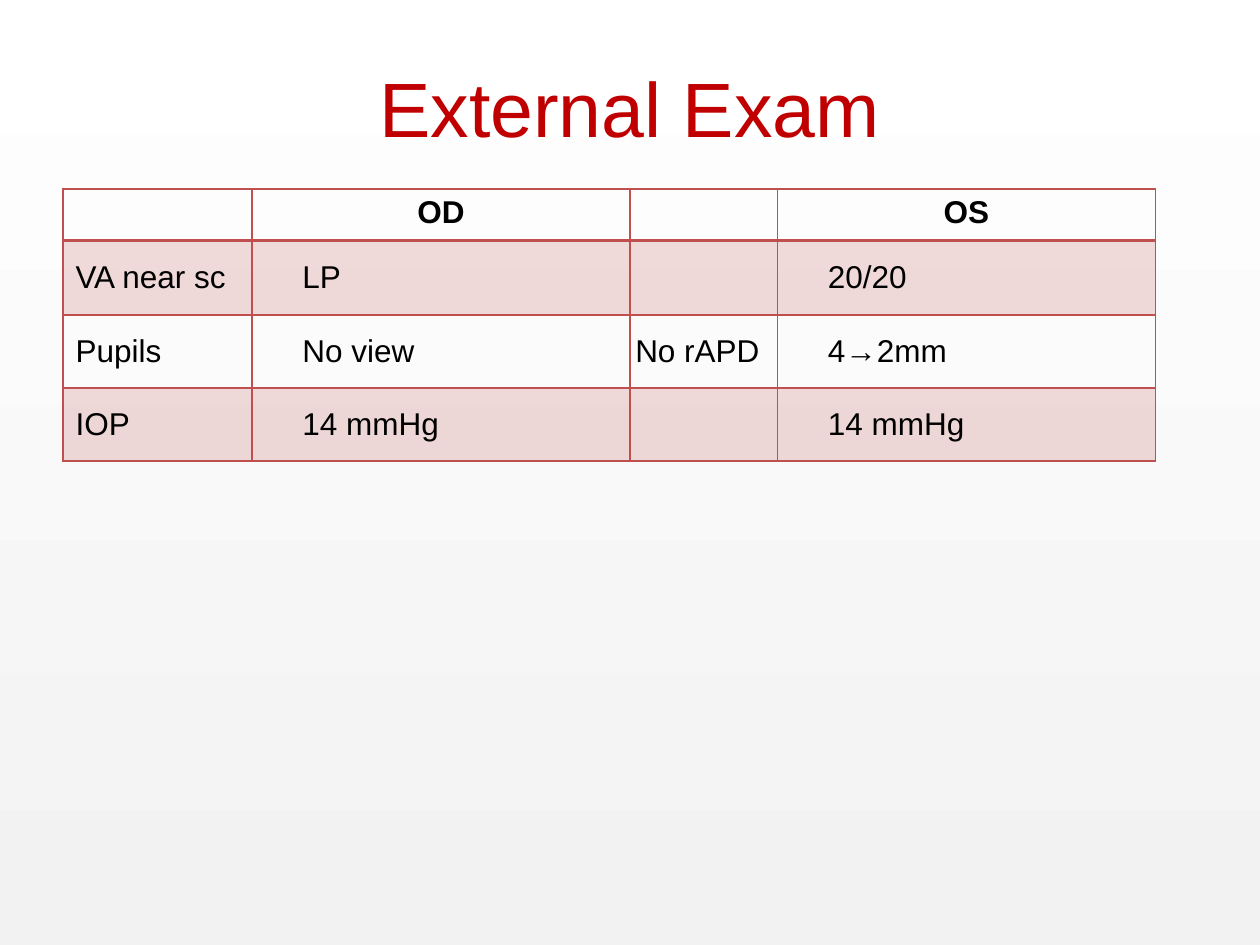
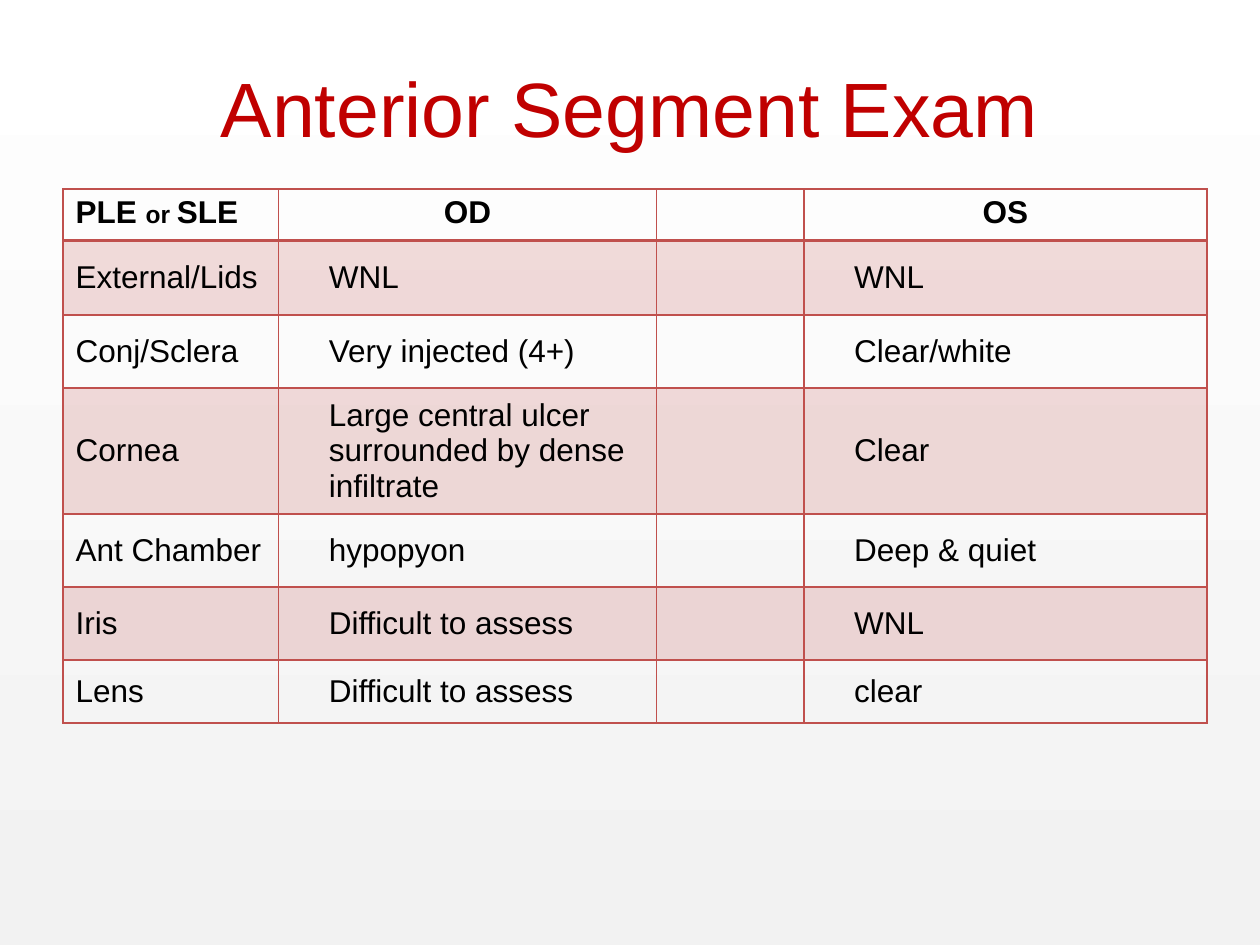
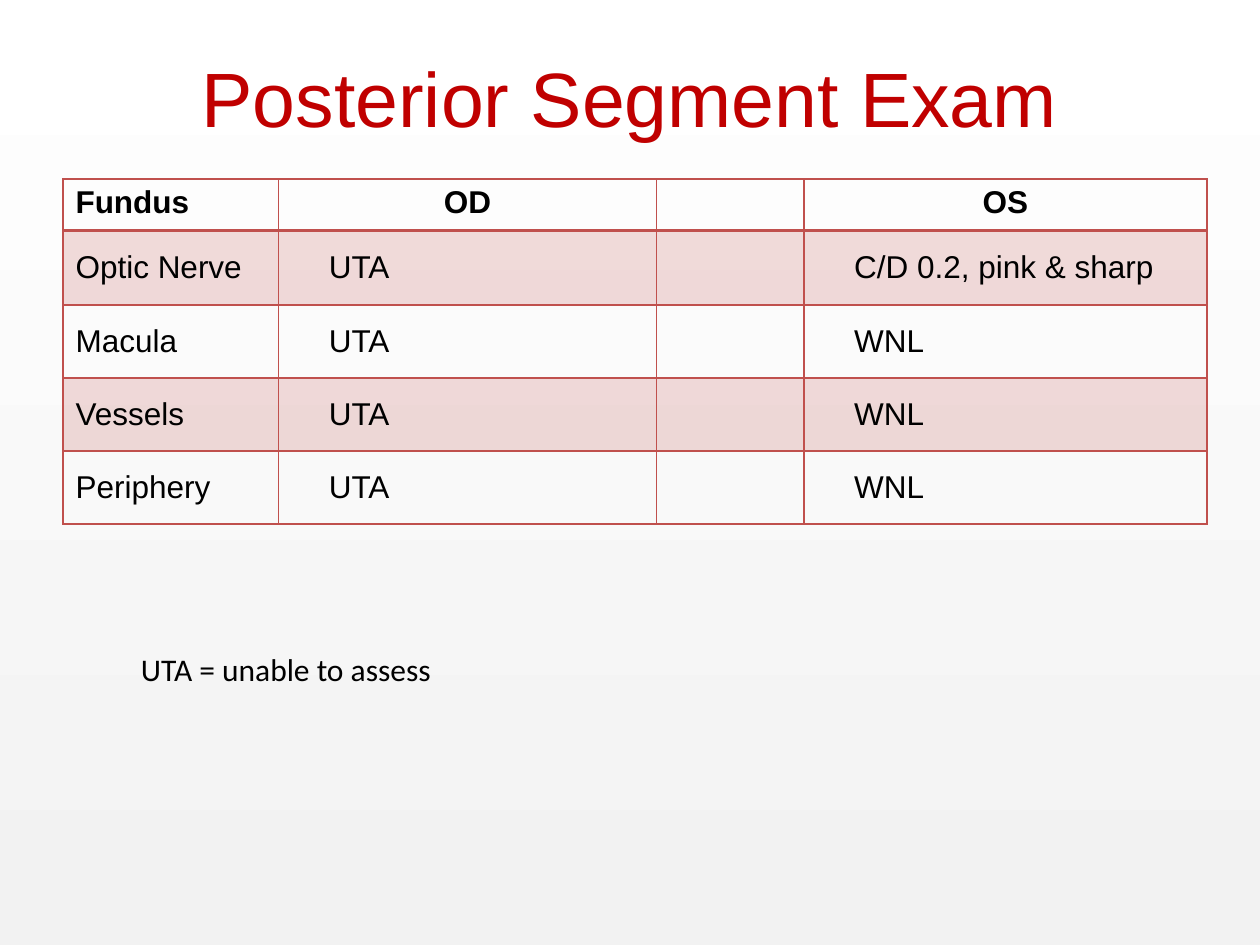
from lxml.etree import SubElement
from pptx import Presentation
from pptx.dml.color import RGBColor
from pptx.enum.text import MSO_ANCHOR as Anchor, PP_ALIGN as Align
from pptx.oxml.ns import qn
from pptx.util import Inches, Pt

COLORS = {"title": "C00000", "text": "000000", "grid": "C0504D",
          "page_top": "FFFFFF", "page_bottom": "F2F2F2"}
BAND_OPACITY = 20  # percent
LEFT = 0.5
HEADER_HEIGHT, FIRST_HEIGHT, ROW_HEIGHT = 0.41, 0.59, 0.58
NARROW_COLUMNS = (1.5, 3, 1.17, 3)
WIDE_COLUMNS = (1.71, 3, 1.17, 3.2)

# A heading is a list of (text, size) runs; a row is finding, OD, both eyes, OS.
EXAMS = [
    {"title": "External Exam", "title_top": 0.22, "table_top": 1.5,
     "columns": NARROW_COLUMNS, "heading": [],
     "rows": [("VA near sc", "LP", "", "20/20"),
              ("Pupils", "No view", "No rAPD", "4→2mm"),
              ("IOP", "14 mmHg", "", "14 mmHg")]},
    {"title": "Anterior Segment Exam", "title_top": 0.22, "table_top": 1.5,
     "columns": WIDE_COLUMNS, "last_height": 0.5,
     "heading": [("PLE ", 18), ("or ", 14), ("SLE", 18)],
     "rows": [("External/Lids", "WNL", "", "WNL"),
              ("Conj/Sclera", "Very injected (4+)", "", "Clear/white"),
              ("Cornea", "Large central ulcer surrounded by dense infiltrate",
               "", "Clear"),
              ("Ant Chamber", "hypopyon", "", "Deep & quiet"),
              ("Iris", "Difficult to assess", "", "WNL"),
              ("Lens", "Difficult to assess", "", "clear")]},
    {"title": "Posterior Segment Exam", "title_top": 0.14, "table_top": 1.42,
     "columns": WIDE_COLUMNS, "heading": [("Fundus", 18)],
     "rows": [("Optic Nerve", "UTA", "", "C/D 0.2, pink & sharp"),
              ("Macula", "UTA", "", "WNL"),
              ("Vessels", "UTA", "", "WNL"),
              ("Periphery", "UTA", "", "WNL")],
     "note": "UTA = unable to assess"},
]


def rgb(name):
    return RGBColor.from_string(COLORS[name])


def write(frame, runs, color="text", font="Arial", bold=False, align=Align.LEFT):
    paragraph = frame.paragraphs[0]
    paragraph.alignment = align
    for text, size in runs:
        run = paragraph.add_run()
        run.text = text
        run.font.name, run.font.size, run.font.bold = font, Pt(size), bold
        run.font.color.rgb = rgb(color)


def add_text(slide, place, text, size, wrap, **style):
    frame = slide.shapes.add_textbox(*map(Inches, place)).text_frame
    frame.word_wrap = wrap
    frame.vertical_anchor = Anchor.MIDDLE
    write(frame, [(text, size)], **style)


def draw_borders(cell, top, bottom):
    properties = cell._tc.get_or_add_tcPr()
    for side, width in (("L", 1), ("R", 1), ("T", top), ("B", bottom)):
        line = SubElement(properties, qn("a:ln" + side), w=str(Pt(width)))
        fill = SubElement(line, qn("a:solidFill"))
        SubElement(fill, qn("a:srgbClr"), val=COLORS["grid"])


def fill_band(cell):
    cell.fill.solid()
    cell.fill.fore_color.rgb = rgb("grid")
    tint = cell._tc.tcPr.find(qn("a:solidFill")).find(qn("a:srgbClr"))
    SubElement(tint, qn("a:alpha"), val=str(BAND_OPACITY * 1000))


def add_findings(slide, exam):
    columns, rows = exam["columns"], exam["rows"]
    heights = [HEADER_HEIGHT, FIRST_HEIGHT] + [ROW_HEIGHT] * (len(rows) - 1)
    heights[-1] = exam.get("last_height", ROW_HEIGHT)
    place = (LEFT, exam["table_top"], sum(columns), sum(heights))
    table = slide.shapes.add_table(len(heights), len(columns),
                                   *map(Inches, place)).table
    table.first_row = table.horz_banding = False
    for column, width in zip(table.columns, columns):
        column.width = Inches(width)
    for row, height in zip(table.rows, heights):
        row.height = Inches(height)

    header = [exam["heading"], [("OD", 18)], [], [("OS", 18)]]
    findings = [[[(text, 18)] if text else [] for text in row] for row in rows]
    for r, row in enumerate([header] + findings):
        for c, runs in enumerate(row):
            cell = table.cell(r, c)
            draw_borders(cell, top=2 if r == 1 else 1, bottom=2 if r == 0 else 1)
            if r % 2:
                fill_band(cell)
            else:
                cell.fill.background()
            if r > 0:
                cell.vertical_anchor = Anchor.MIDDLE
                cell.margin_left = Inches((0.1, 0.4, 0, 0.4)[c])
            centred = c > 0 if r == 0 else c == 2
            write(cell.text_frame, runs, bold=r == 0,
                  align=Align.CENTER if centred else Align.LEFT)


def paint_background(master):
    fill = master.background.fill
    fill.gradient()
    fill.gradient_angle = 90
    for stop, position, name in zip(fill.gradient_stops, (0, 1),
                                    ("page_bottom", "page_top")):
        stop.position = position
        stop.color.rgb = rgb(name)


def main():
    prs = Presentation()
    prs.slide_width, prs.slide_height = Inches(10), Inches(7.5)
    paint_background(prs.slide_master)
    for exam in EXAMS:
        slide = prs.slides.add_slide(prs.slide_layouts[6])
        add_text(slide, (LEFT, exam["title_top"], 9, 1.25), exam["title"], 44,
                 wrap=True, color="title", align=Align.CENTER)
        add_findings(slide, exam)
        if "note" in exam:
            add_text(slide, (1.02, 5.11, 2.55, 0.4), exam["note"], 18,
                     wrap=False, font="Calibri")
    prs.save("out.pptx")


if __name__ == "__main__":
    main()
